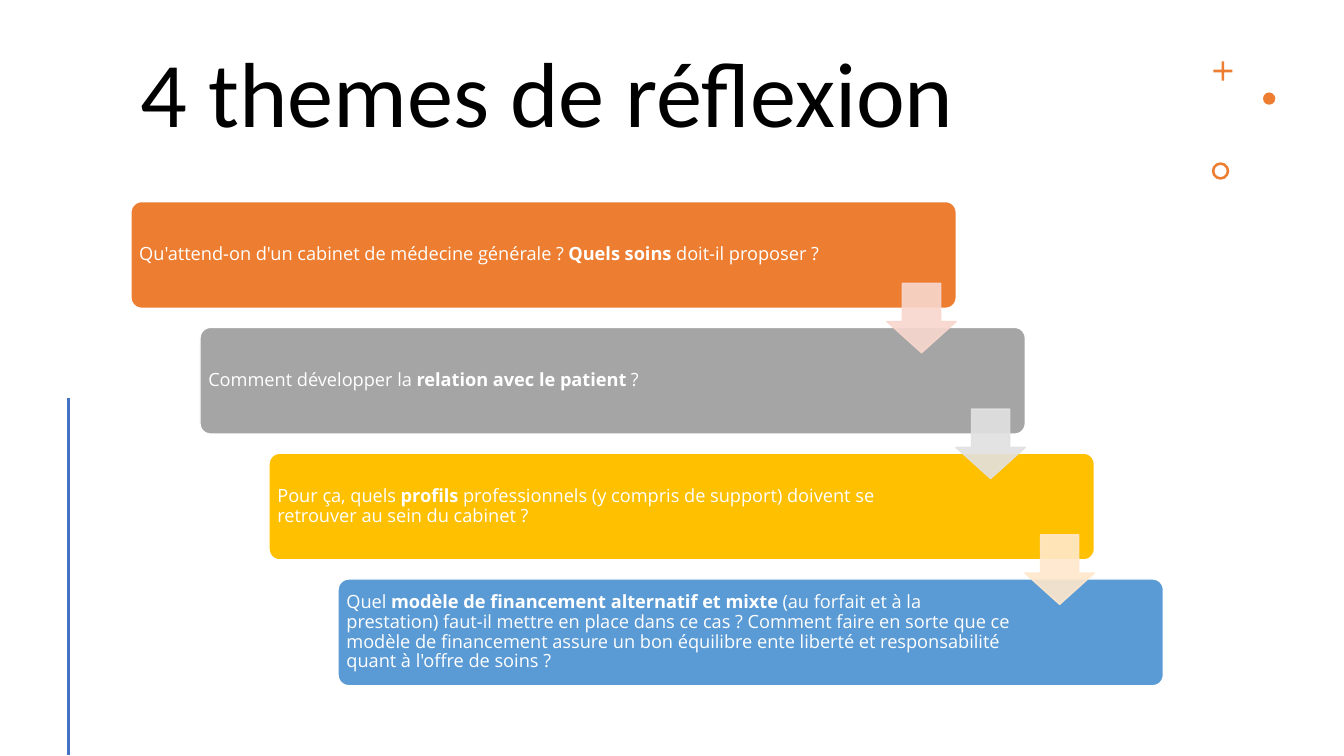
from lxml import etree
from pptx import Presentation
from pptx.dml.color import RGBColor
from pptx.enum.shapes import MSO_CONNECTOR, MSO_SHAPE
from pptx.enum.text import MSO_ANCHOR
from pptx.oxml.ns import qn
from pptx.util import Cm, Pt

COLORS = {
    "black": "000000", "white": "FFFFFF", "rule": "4472C4",
    "orange": "ED7D31", "gray": "A5A5A5", "gold": "FFC000", "blue": "5B9BD5",
    "pale_orange": "F8D7CE", "pale_gray": "E1E1E1", "pale_gold": "FFE8CC",
}

# Box colour, text width in cm, runs as (text, bold)
THEMES = [
    ("orange", 17.68, [("Qu'attend-on d'un cabinet de médecine générale ? ", False),
                       ("Quels soins ", True),
                       ("doit-il proposer ?", False)]),
    ("gray", 17.15, [("Comment développer la ", False),
                     ("relation avec le patient ", True),
                     ("?", False)]),
    ("gold", 17.17, [("Pour ça, quels ", False),
                     ("profils", True),
                     (" professionnels (y compris de support) doivent se "
                      "retrouver au sein du cabinet ?", False)]),
    ("blue", 17.15, [("Quel ", False),
                     ("modèle de financement alternatif et mixte ", True),
                     ("(au forfait et à la prestation) faut-il mettre en place dans ce cas ? "
                      "Comment faire en sorte que ce modèle de financement assure un bon "
                      "équilibre ente liberté et responsabilité quant à l'offre de soins ?",
                      False)]),
]
ARROWS = ["pale_orange", "pale_gray", "pale_gold"]
STEP_X, STEP_Y = 1.74, 3.17


def rgb(name):
    return RGBColor.from_string(COLORS[name])


class Deck:
    def __init__(self, width, height):
        self.prs = Presentation()
        self.prs.slide_width, self.prs.slide_height = Cm(width), Cm(height)
        self.s = self.prs.slides.add_slide(self.prs.slide_layouts[6])

    def shape(self, kind, x, y, w, h, fill, line=None, adj=(), alpha=None):
        sp = self.s.shapes.add_shape(kind, Cm(x), Cm(y), Cm(w), Cm(h))
        sp.shadow.inherit = False
        for i, value in enumerate(adj):
            sp.adjustments[i] = value
        sp.fill.solid()
        sp.fill.fore_color.rgb = rgb(fill)
        if line:
            sp.line.color.rgb = rgb(line)
            sp.line.width = Pt(1)
        else:
            sp.line.fill.background()
        if alpha:
            for color in sp._element.spPr.iter(qn("a:srgbClr")):
                etree.SubElement(color, qn("a:alpha"), val=str(alpha * 1000))
        return sp

    def text(self, runs, x, y, w, h, font, size, color,
             anchor=MSO_ANCHOR.MIDDLE, inset=0.13):
        tf = self.s.shapes.add_textbox(Cm(x), Cm(y), Cm(w), Cm(h)).text_frame
        tf.word_wrap = True
        tf.vertical_anchor = anchor
        tf.margin_left = tf.margin_right = Cm(inset)
        tf.margin_top = tf.margin_bottom = Cm(0.13)
        p = tf.paragraphs[0]
        p.line_spacing = 0.9
        for text, bold in runs:
            r = p.add_run()
            r.text = text
            r.font.name, r.font.size, r.font.bold = font, Pt(size), bold
            r.font.color.rgb = rgb(color)

    def line(self, x1, y1, x2, y2, color, width):
        c = self.s.shapes.add_connector(MSO_CONNECTOR.STRAIGHT,
                                        Cm(x1), Cm(y1), Cm(x2), Cm(y2))
        c.line.color.rgb = rgb(color)
        c.line.width = Pt(width)
        etree.SubElement(c._element.spPr, qn("a:effectLst"))


def main():
    deck = Deck(33.87, 19.05)
    deck.text([("4 themes de réflexion", False)], 3.3, 1.07, 25.98, 3.33,
              font="Calibri", size=66, color="black",
              anchor=MSO_ANCHOR.TOP, inset=0.25)

    deck.shape(MSO_SHAPE.CROSS, 30.58, 1.55, 0.48, 0.48, "orange", adj=[0.43])
    deck.shape(MSO_SHAPE.OVAL, 31.83, 2.33, 0.31, 0.31, "orange")
    deck.shape(MSO_SHAPE.DONUT, 30.54, 4.09, 0.44, 0.44, "orange", adj=[0.15])
    deck.line(1.73, 10.03, 1.73, 19.03, "rule", 2)

    for i, (color, text_width, runs) in enumerate(THEMES):
        x, y = 3.3 + i * STEP_X, 5.08 + i * STEP_Y
        deck.shape(MSO_SHAPE.ROUNDED_RECTANGLE, x, y, 20.8, 2.69, color,
                   line="white", adj=[0.1])
        deck.text(runs, x + 0.08, y + 0.08, text_width, 2.53,
                  font="Open Sans", size=13, color="white")

    for i, color in enumerate(ARROWS):
        deck.shape(MSO_SHAPE.DOWN_ARROW, 22.35 + i * STEP_X, 7.14 + i * STEP_Y,
                   1.75, 1.75, color, line=color, adj=[0.55, 0.45], alpha=90)

    deck.prs.save("out.pptx")


if __name__ == "__main__":
    main()
